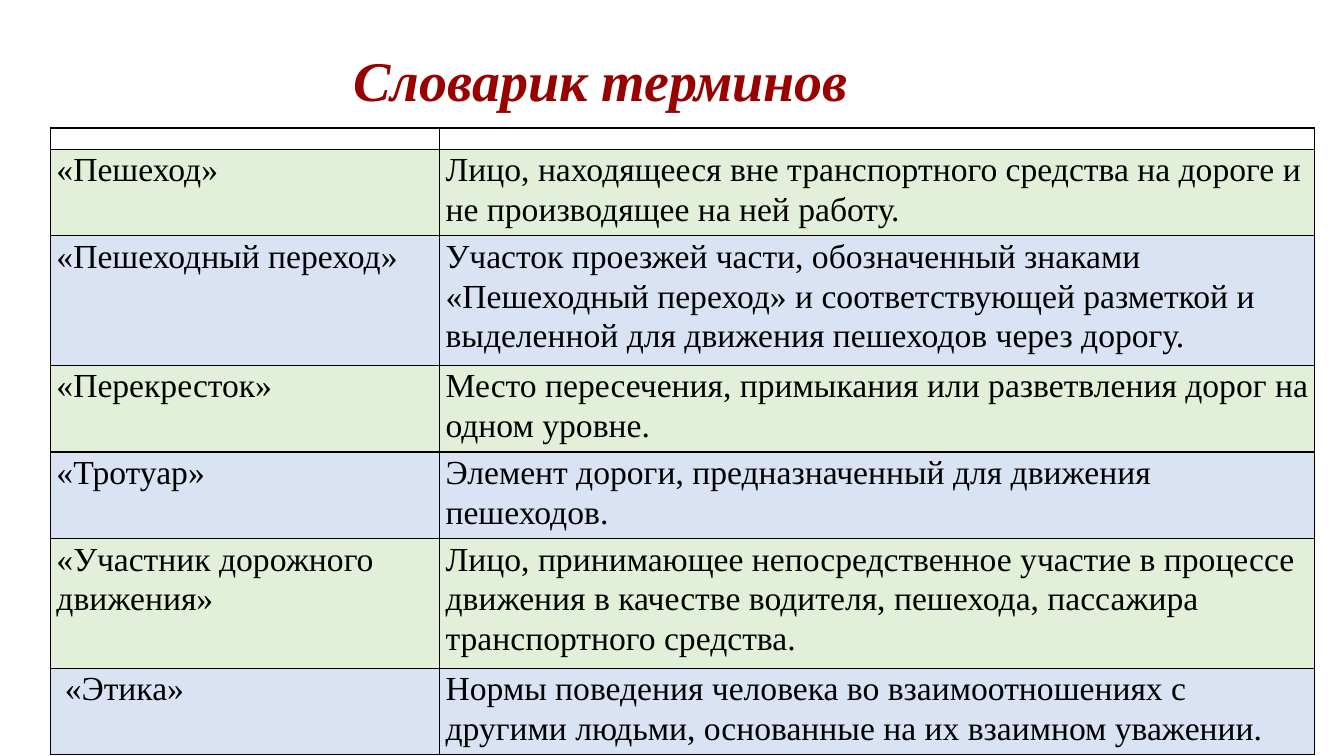
from lxml.etree import SubElement
from pptx import Presentation
from pptx.dml.color import RGBColor
from pptx.enum.text import PP_ALIGN
from pptx.oxml import parse_xml
from pptx.oxml.ns import nsdecls
from pptx.util import Inches, Pt

TERMS = [
    ("«Пешеход»",
     "Лицо, находящееся вне транспортного средства на дороге и не производящее на ней работу."),
    ("«Пешеходный переход»",
     "Участок проезжей части, обозначенный знаками «Пешеходный переход» и соответствующей "
     "разметкой и выделенной для движения пешеходов через дорогу."),
    ("«Перекресток»",
     "Место пересечения, примыкания или разветвления дорог на одном уровне."),
    ("«Тротуар»",
     "Элемент дороги, предназначенный для движения пешеходов."),
    ("«Участник дорожного движения»",
     "Лицо, принимающее непосредственное участие в процессе движения в качестве водителя, "
     "пешехода, пассажира транспортного средства."),
    (" «Этика»",
     "Нормы поведения человека во взаимоотношениях с другими людьми, основанные на их "
     "взаимном уважении."),
]
COLUMNS = [3.86, 8.68]
HEADER, TWO_LINES, THREE_LINES = 0.21, 0.86, 1.28
ROWS = [HEADER, TWO_LINES, THREE_LINES, TWO_LINES, TWO_LINES, THREE_LINES, TWO_LINES]


def rgb(value):
    return RGBColor.from_string(value)


class Glossary:
    font = "Times New Roman"
    ink, accent = "000000", "990000"
    header_fill, bands = "FFFFFF", ("E2F0D9", "DAE3F3")

    def __init__(self, s):
        self.s = s

    def run(self, p, text, size, color=ink, font=font, strong=False):
        r = p.add_run()
        r.text = text
        r.font.name, r.font.size = font, Pt(size)
        r.font.color.rgb = rgb(color)
        r.font.bold = r.font.italic = strong

    def title(self, text, x, y, w, h):
        tf = self.s.shapes.add_textbox(Inches(x), Inches(y), Inches(w), Inches(h)).text_frame
        tf.word_wrap = True
        p = tf.paragraphs[0]
        p.alignment = PP_ALIGN.CENTER
        self.run(p, " ", 18, font="Calibri")
        self.run(p, text, 40, self.accent, strong=True)

    def borders(self, cell):
        tcPr = cell._tc.get_or_add_tcPr()
        for i, side in enumerate("LRTB"):
            tcPr.insert(i, parse_xml(
                f'<a:ln{side} {nsdecls("a")} w="12700"><a:solidFill>'
                f'<a:srgbClr val="{self.ink}"/></a:solidFill></a:ln{side}>'))

    def cell(self, cell, text, fill):
        cell.margin_left = cell.margin_right = Inches(0.06)
        cell.margin_top = cell.margin_bottom = 0
        cell.fill.solid()
        cell.fill.fore_color.rgb = rgb(fill)
        self.borders(cell)
        p = cell.text_frame.paragraphs[0]
        if text:
            p.line_spacing = 1.07
            self.run(p, text, 24)
        else:
            # A small end mark keeps the empty header row low
            SubElement(p._p, "{http://schemas.openxmlformats.org/drawingml/2006/main}endParaRPr",
                       sz="1000")

    def table(self, rows, widths, heights, x, y):
        table = self.s.shapes.add_table(
            len(rows), len(widths), Inches(x), Inches(y),
            Inches(sum(widths)), Inches(sum(heights))).table
        table.first_row = table.horz_banding = False
        for column, width in zip(table.columns, widths):
            column.width = Inches(width)
        for i, (row, height, texts) in enumerate(zip(table.rows, heights, rows)):
            row.height = Inches(height)
            fill = self.bands[(i - 1) % 2] if i else self.header_fill
            for cell, text in zip(row.cells, texts):
                self.cell(cell, text, fill)


def main():
    prs = Presentation()
    prs.slide_width, prs.slide_height = Inches(13.33), Inches(7.5)
    glossary = Glossary(prs.slides.add_slide(prs.slide_layouts[6]))
    glossary.title("Словарик терминов", 2.26, 0.4, 7.34, 0.77)
    glossary.table([("", "")] + TERMS, COLUMNS, ROWS, 0.5, 1.27)
    prs.save("out.pptx")


if __name__ == "__main__":
    main()
